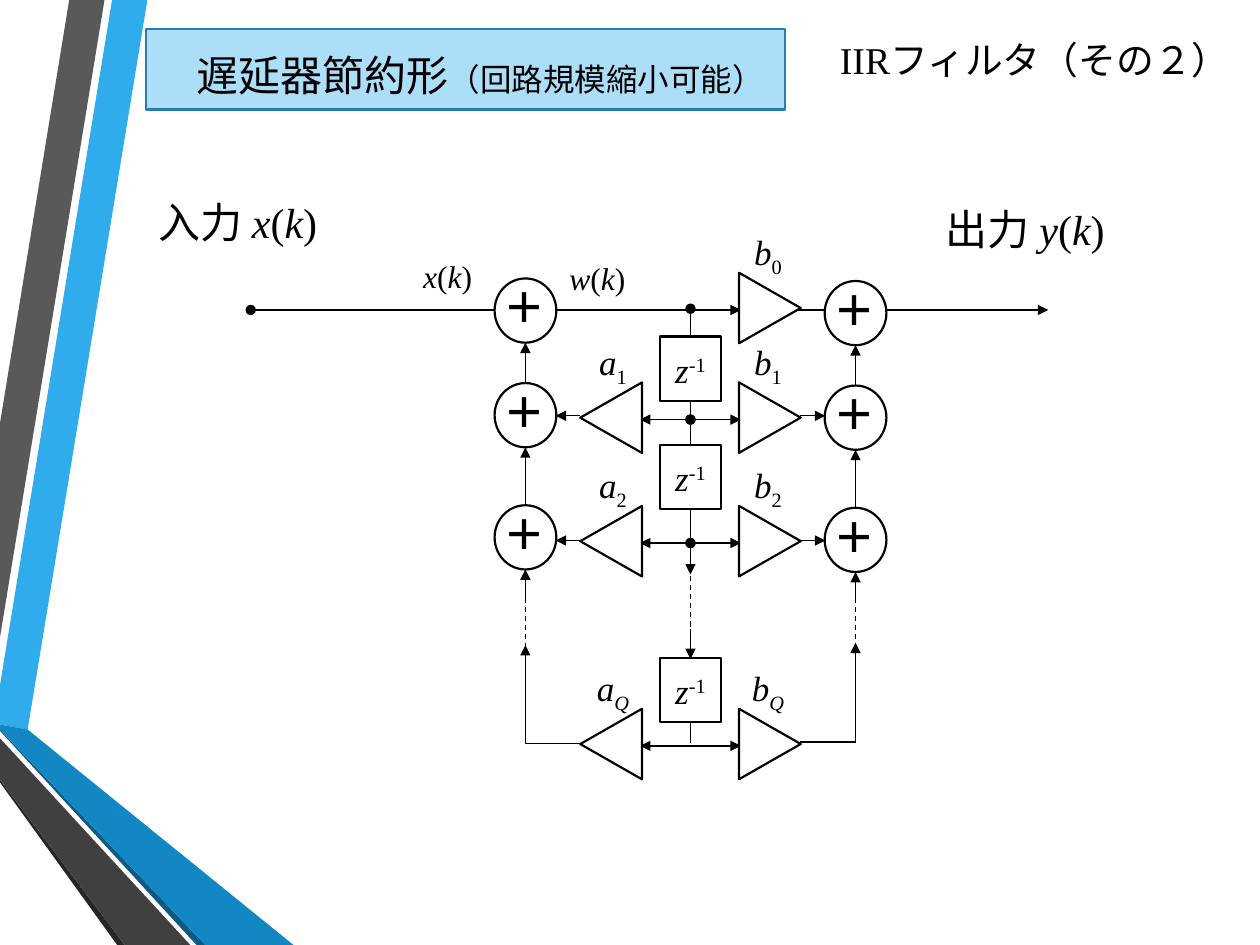
import pptx
import pptx.util
import pptx.dml.color
import pptx.enum.shapes
import pptx.enum.text
import pptx.oxml.ns
from lxml import etree

Inches, Pt = pptx.util.Inches, pptx.util.Pt
SHAPE = pptx.enum.shapes.MSO_SHAPE
ALIGN = pptx.enum.text.PP_ALIGN
MIDDLE = pptx.enum.text.MSO_ANCHOR.MIDDLE
qn = pptx.oxml.ns.qn

COLORS = {"ink": "000000", "paper": "FFFFFF", "banner": "ACDEF7", "border": "247FAF"}
SERIF = "Times New Roman"

# Ribbons at the left edge: colour and outline in hundredths of an inch
RIBBONS = [
    ("30ACEC", [(0, 544), (0, 575), (22, 579), (117, 0), (89, 0)]),
    ("595959", [(83, 0), (55, 0), (0, 336), (0, 506)]),
    ("262626", [(0, 619), (0, 621), (93, 750), (99, 750)]),
    ("0C5A82", [(0, 579), (0, 580), (156, 750), (163, 750)]),
    ("1287C3", [(0, 579), (163, 750), (233, 750), (22, 579), (0, 575)]),
    ("404040", [(0, 619), (99, 750), (151, 750), (0, 586)]),
]

# Grid of the circuit, in inches
DELAY_X, LEFT_X, RIGHT_X = 5.48, 4.17, 6.79   # centres of the three columns
A_X, B_X = 4.85, 6.11                         # centres of the gain triangles
TAP_Y = [2.46, 3.33, 4.31, 5.92]              # rows 0, 1, 2, Q
ADDER_TOP = [2.21, 3.04, 4.01]
DELAY_TOP = [2.67, 3.53, 5.22]
NODE_W, NODE_H = 0.49, 0.51
GAIN_W, GAIN_H = 0.56, 0.49                   # before rotation


def rgb(name):
    return pptx.dml.color.RGBColor.from_string(COLORS.get(name, name))


def func(name):
    """Runs (text, italic, baseline) of a signal such as x(k)."""
    return [(name, True, 0), ("(", False, 0), ("k", True, 0), (")", False, 0)]


def write(tf, runs, size, align=ALIGN.LEFT, font=SERIF, bold=None, spacing=None):
    tf.word_wrap = True
    p = tf.paragraphs[0]
    p.alignment = align
    p.line_spacing = spacing
    p.font.name, p.font.size, p.font.bold = font, Pt(size), bold
    p.font.color.rgb = rgb("ink")
    for text, italic, baseline in runs:
        r = p.add_run()
        r.text = text
        r.font.italic = italic
        if baseline:
            r.font._element.set("baseline", str(baseline * 1000))
    return p


def set_insets(tf, top=0):
    tf.margin_left = tf.margin_right = tf.margin_bottom = 0
    tf.margin_top = Inches(top)
    tf.vertical_anchor = MIDDLE


def add_text(s, x, y, w, h, runs, size, **style):
    tf = s.shapes.add_textbox(Inches(x), Inches(y), Inches(w), Inches(h)).text_frame
    return write(tf, runs, size, **style)


def add_block(s, kind, x, y, w, h, fill="paper", line="ink"):
    sp = s.shapes.add_shape(kind, Inches(x), Inches(y), Inches(w), Inches(h))
    sp.shadow.inherit = False
    sp.fill.solid()
    sp.fill.fore_color.rgb = rgb(fill)
    sp.line.color.rgb = rgb(line)
    sp.line.width = Pt(1.25)
    return sp


def add_wire(s, x1, y1, x2, y2, head=None, tail=None, dash=False):
    c = s.shapes.add_connector(pptx.enum.shapes.MSO_CONNECTOR.STRAIGHT,
                               Inches(x1), Inches(y1), Inches(x2), Inches(y2))
    c.line.color.rgb = rgb("ink")
    c.line.width = Pt(0.75)
    ln = c.line._get_or_add_ln()
    if dash:
        etree.SubElement(ln, qn("a:prstDash")).set("val", "dash")
    for tag, end in (("a:headEnd", head), ("a:tailEnd", tail)):
        if end:
            etree.SubElement(ln, qn(tag)).set("type", end)
    etree.SubElement(c._element.spPr, qn("a:effectLst"))


def add_ribbon(s, color, points):
    builder = s.shapes.build_freeform(*points[0], scale=9144)
    builder.add_line_segments(points[1:], close=True)
    sp = builder.convert_to_shape()
    sp.shadow.inherit = False
    sp.fill.solid()
    sp.fill.fore_color.rgb = rgb(color)
    sp.line.fill.background()


def add_adder(s, x, top):
    sp = add_block(s, SHAPE.OVAL, x - NODE_W / 2, top, NODE_W, NODE_H)
    set_insets(sp.text_frame, 0.12)
    write(sp.text_frame, [("＋", False, 0)], 24, align=ALIGN.JUSTIFY,
          font="Cabin", bold=True, spacing=Pt(16))


def add_delay(s, top):
    sp = add_block(s, SHAPE.RECTANGLE, DELAY_X - NODE_W / 2, top, NODE_W, NODE_H)
    set_insets(sp.text_frame, 0.12)
    write(sp.text_frame, [("z", True, 0), ("-1", False, 30)], 20,
          align=ALIGN.CENTER, spacing=Pt(16))


def add_gain(s, x, tap_y, rotation, letter, index, label_x):
    top = tap_y - 0.26
    sp = add_block(s, SHAPE.ISOSCELES_TRIANGLE, x - GAIN_W / 2, top, GAIN_W, GAIN_H)
    sp.rotation = rotation
    box = s.shapes.add_textbox(Inches(label_x), Inches(top - 0.31), Inches(0.43), Inches(0.42))
    set_insets(box.text_frame)
    write(box.text_frame, [(letter, True, 0), (index, index == "Q", -25)], 20,
          align=ALIGN.CENTER, spacing=Pt(16))


def add_headings(s):
    # Title at the top right
    title = s.shapes.title
    title.left, title.top = Inches(6.4), Inches(0.23)
    title.width, title.height = Inches(3.46), Inches(0.49)
    title.text_frame.vertical_anchor = MIDDLE
    write(title.text_frame, [("IIRフィルタ（その２）", None, 0)], 21.6, align=ALIGN.RIGHT)

    # Banner
    add_block(s, SHAPE.RECTANGLE, 1.16, 0.23, 5.07, 0.64, "banner", "border")
    p = add_text(s, 1.39, 0.28, 4.84, 0.55,
                 [("遅延器節約形", None, 0), ("（回路規模縮小可能）", None, 0)],
                 24, align=ALIGN.CENTER, spacing=Pt(33.6))
    p.space_before = p.space_after = Pt(6)
    p.runs[1].font.size = Pt(18)

    # Input and output
    add_text(s, 1.16, 1.51, 1.76, 0.5, [("入力 ", None, 0)] + func("x"), 24)
    add_text(s, 7.41, 1.57, 1.76, 0.5, [("出力 ", None, 0)] + func("y"), 24)


def add_delay_wires(s):
    add_wire(s, 1.99, 2.46, 8.32, 2.46, head="oval", tail="triangle")
    add_wire(s, DELAY_X, 2.45, DELAY_X, 4.56, head="oval", tail="triangle")
    add_wire(s, DELAY_X, 4.43, DELAY_X, 5.06, dash=True)
    add_wire(s, DELAY_X, 4.99, DELAY_X, 5.23, tail="triangle")
    add_wire(s, DELAY_X, 5.31, DELAY_X, 5.9)
    for row, y in enumerate(TAP_Y):
        head = "oval" if row in (1, 2) else None
        add_wire(s, DELAY_X, y, 5.88, y, head=head, tail="triangle")
        if row:
            add_wire(s, DELAY_X, y, 5.08, y, head=head, tail="triangle")


def add_adder_column(s, x, tip_x, edge_x, drop):
    """One chain of adders, fed from the gain tips at tip_x."""
    tops = [top + drop for top in ADDER_TOP]
    for upper, lower in zip(tops, tops[1:]):
        add_wire(s, x, lower, x, upper + NODE_H, tail="triangle")
    for y in (3.3, 4.29):
        add_wire(s, tip_x, y, edge_x, y, tail="triangle")
    add_wire(s, x, 4.75, x, tops[-1] + NODE_H, tail="triangle")
    add_wire(s, x, 4.6, x, 5.23, dash=True)
    corner_y = 5.9 - drop / 2
    add_wire(s, x, corner_y, x, 5.12 - drop, tail="triangle")
    add_wire(s, x, corner_y, tip_x, corner_y)
    for top in tops:
        add_adder(s, x, top)


def main():
    prs = pptx.Presentation()
    prs.slide_width, prs.slide_height = Inches(10), Inches(7.5)
    s = prs.slides.add_slide(prs.slide_layouts[5])

    for color, points in RIBBONS:
        add_ribbon(s, color, points)
    add_headings(s)

    # Circuit: wires first, blocks on top
    add_delay_wires(s)
    add_adder_column(s, LEFT_X, 4.6, 4.41, 0)
    add_adder_column(s, RIGHT_X, 6.35, 6.55, 0.02)
    for top in DELAY_TOP:
        add_delay(s, top)
    for index, y in zip("012Q", TAP_Y):
        add_gain(s, B_X, y, 90, "b", index, 5.88)
        if index != "0":
            add_gain(s, A_X, y, 270, "a", index, 4.65)

    # Signal names
    add_text(s, 3.26, 1.99, 1.14, 0.4, func("x"), 18)
    add_text(s, 4.42, 2.01, 0.97, 0.4, func("w"), 18)
    prs.save("out.pptx")


if __name__ == "__main__":
    main()
